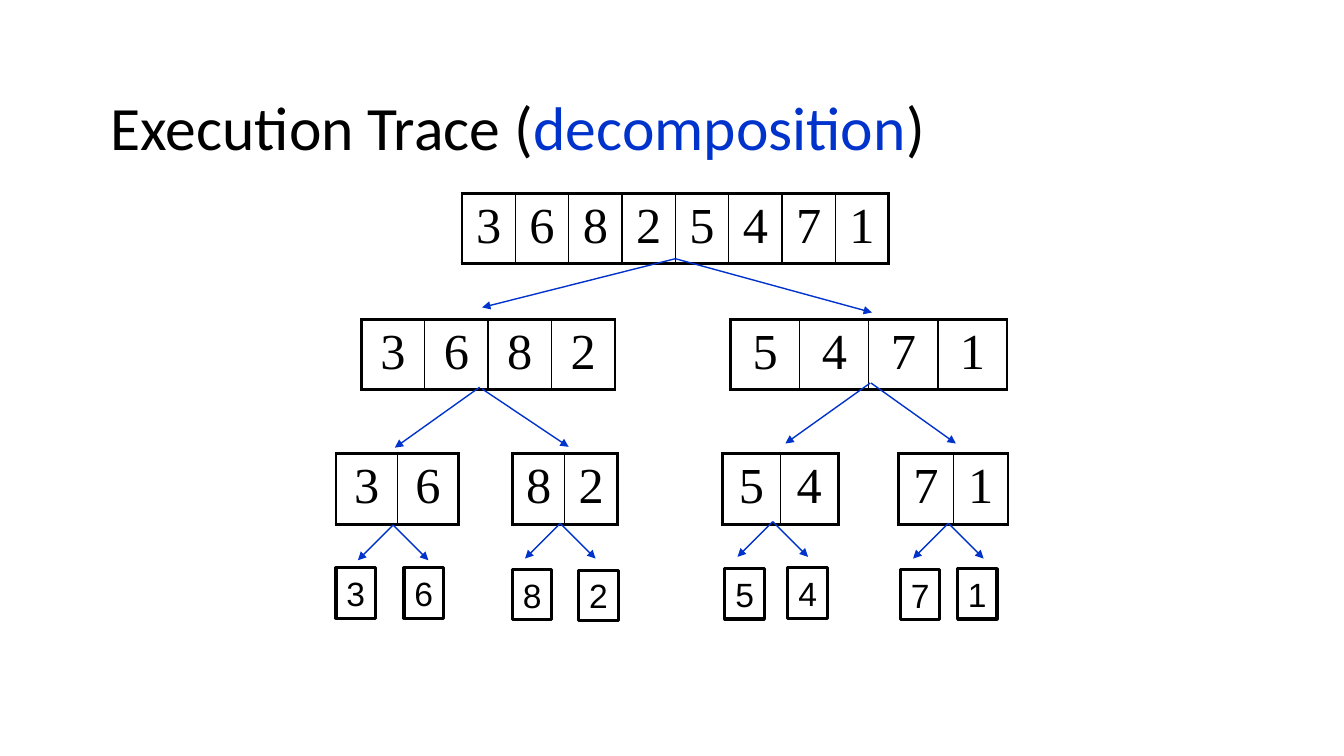
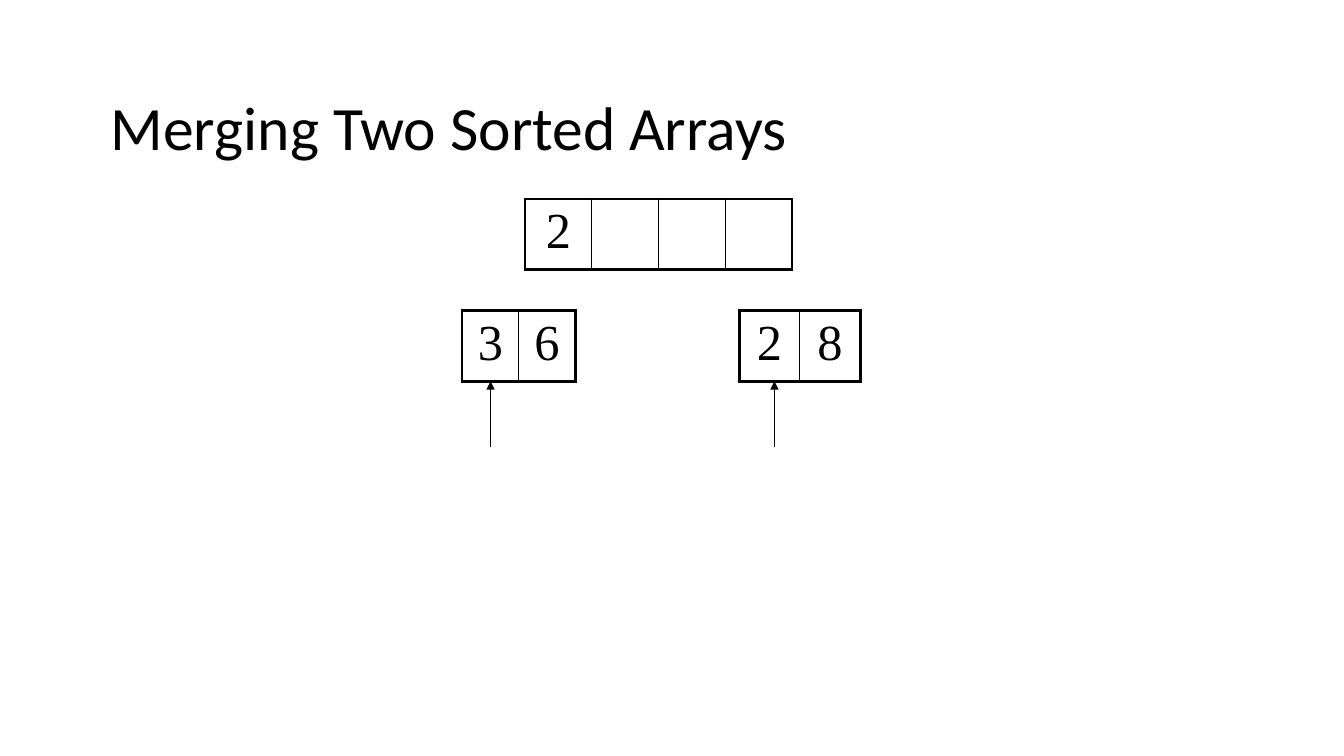
"""Build two slides on merge sort: the decomposition tree and the merge step."""
from lxml import etree
from pptx import Presentation
from pptx.dml.color import RGBColor
from pptx.enum.shapes import MSO_CONNECTOR, MSO_SHAPE
from pptx.enum.text import MSO_ANCHOR, PP_ALIGN
from pptx.oxml.ns import qn
from pptx.util import Inches, Pt

BLACK = RGBColor(0x00, 0x00, 0x00)
WHITE = RGBColor(0xFF, 0xFF, 0xFF)
BLUE = RGBColor(0x00, 0x33, 0xCC)
CENTER = PP_ALIGN.CENTER
TOP, MIDDLE = MSO_ANCHOR.TOP, MSO_ANCHOR.MIDDLE
STRAIGHT = MSO_CONNECTOR.STRAIGHT
RECTANGLE = MSO_SHAPE.RECTANGLE

UNIT = Inches(1) // 12
COLUMNS, ROWS = 160, 90
CELL_HEIGHT = 8.4
LEAF_WIDTH, LEAF_HEIGHT = 4.7, 6
FORK_REACH = 4.2
THICK, THIN = Pt(2.25), Pt(1)

TITLE_FONT = {"name": "Calibri", "size": Pt(44)}
CELL_FONT = {"name": "Times New Roman", "size": Pt(36)}
LEAF_FONT = {"name": "Arial", "size": Pt(24)}

LEAF_FORKS = [
    (x, y, x + side * FORK_REACH, y + FORK_REACH)
    for x, y in [(46.8, 62.5), (66.7, 62.3), (92, 62.1), (112.9, 62.3)]
    for side in (-1, 1)
]

SLIDES = [
    {
        "title": [("Execution Trace (", BLACK), ("decomposition", BLUE), (")", BLACK)],
        "arrays": [
            ("36825471", 55, 23, 50.8),
            ("3682", 43, 38, 30.2),
            ("5471", 87, 38, 32.9),
            ("36", 40, 54, 14.6),
            ("82", 61, 54, 12.5),
            ("54", 86, 54, 13.8),
            ("71", 107, 54, 13),
        ],
        "leaves": [
            ("3", 40, 67.6), ("6", 48.1, 67.6), ("8", 61, 67.8), ("2", 68.9, 67.9),
            ("5", 86.3, 67.7), ("4", 93.8, 67.6), ("7", 107.2, 67.8), ("1", 114, 67.7),
        ],
        "arrow_color": BLUE,
        "arrows": [
            (80.4, 30.8, 57.4, 36.6),
            (80.4, 30.8, 103.8, 37.2),
            (57.1, 46.1, 47, 53.3),
            (57.4, 46.3, 67.7, 53.2),
            (103.6, 45.6, 93.5, 52.8),
            (103.7, 45.6, 113.8, 52.8),
        ] + LEAF_FORKS,
    },
    {
        "title": [("Merging Two Sorted Arrays", BLACK)],
        "arrays": [
            (["2", "", "", ""], 62.5, 23.7, 31.8),
            ("36", 55, 37, 13.5),
            ("28", 88, 37, 14.4),
        ],
        "leaves": [],
        "arrow_color": BLACK,
        "arrows": [(x, 53.2, x, 45.4) for x in (58.4, 92.2)],
    },
]


def grid(*counts):
    """Turn grid counts into lengths."""
    return [round(count * UNIT) for count in counts]


def write(para, text, font, color=BLACK):
    """Add a formatted run to a paragraph."""
    span = para.add_run()
    span.text = text
    for name, value in font.items():
        setattr(span.font, name, value)
    span.font.color.rgb = color


deck = Presentation()
deck.slide_width, deck.slide_height = grid(COLUMNS, ROWS)

for content in SLIDES:
    page = deck.slides.add_slide(deck.slide_layouts[6])

    frame = page.shapes.add_textbox(*grid(12, 8, COLUMNS - 24, 15)).text_frame
    frame.word_wrap = True
    frame.vertical_anchor = MIDDLE
    frame.paragraphs[0].line_spacing = 0.9
    for text, color in content["title"]:
        write(frame.paragraphs[0], text, TITLE_FONT, color)

    for values, left, top, width in content["arrays"]:
        table = page.shapes.add_table(
            1, len(values), *grid(left, top, width, CELL_HEIGHT)
        ).table
        table.first_row = table.horz_banding = False
        last = len(values) - 1
        for index, value in enumerate(values):
            cell = table.cell(0, index)
            borders = {
                "a:lnL": THICK if index == 0 else THIN,
                "a:lnR": THICK if index == last else THIN,
                "a:lnT": THICK,
                "a:lnB": THICK,
            }
            properties = cell._tc.get_or_add_tcPr()
            for tag, weight in borders.items():
                border = etree.SubElement(properties, qn(tag), w=str(weight))
                fill = etree.SubElement(border, qn("a:solidFill"))
                etree.SubElement(fill, qn("a:srgbClr"), val=str(BLACK))
            cell.fill.solid()
            cell.fill.fore_color.rgb = WHITE
            para = cell.text_frame.paragraphs[0]
            para.alignment = CENTER
            if value:
                write(para, value, CELL_FONT)

    for value, left, top in content["leaves"]:
        box = page.shapes.add_shape(
            RECTANGLE, *grid(left, top, LEAF_WIDTH, LEAF_HEIGHT)
        )
        box.shadow.inherit = False
        box.fill.background()
        box.line.color.rgb = BLACK
        box.line.width = THICK
        box.text_frame.word_wrap = False
        box.text_frame.vertical_anchor = TOP
        para = box.text_frame.paragraphs[0]
        para.alignment = CENTER
        write(para, value, LEAF_FONT)

    for ends in content["arrows"]:
        arrow = page.shapes.add_connector(STRAIGHT, *grid(*ends))
        arrow.line.color.rgb = content["arrow_color"]
        arrow.line.width = THIN
        etree.SubElement(arrow.line._get_or_add_ln(), qn("a:tailEnd"), type="triangle")
        etree.SubElement(arrow._element.spPr, qn("a:effectLst"))

deck.save("out.pptx")
